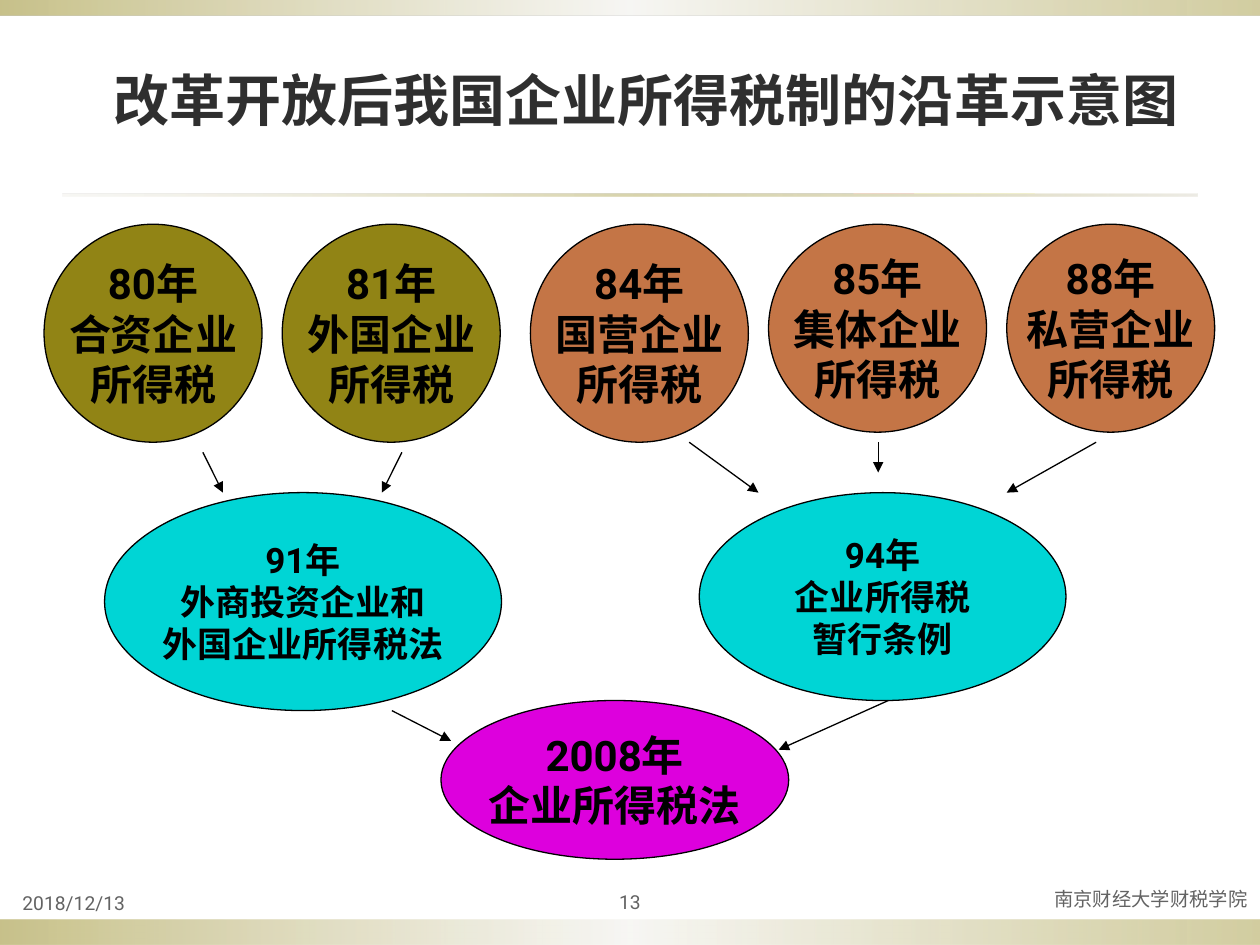
import dataclasses

import lxml.etree
import pptx
import pptx.dml.color
import pptx.enum.shapes
import pptx.enum.text
import pptx.oxml.ns
import pptx.util

Inches = pptx.util.Inches
Pt = pptx.util.Pt
Color = pptx.dml.color.RGBColor.from_string
qn = pptx.oxml.ns.qn
ALIGN = pptx.enum.text.PP_ALIGN
ANCHOR = pptx.enum.text.MSO_ANCHOR
SHAPE = pptx.enum.shapes.MSO_SHAPE


@dataclasses.dataclass
class Theme:
    olive: str = "918415"
    pale: str = "EEEDE7"
    sand: str = "DCD9CC"
    orange: str = "C47546"
    cyan: str = "00D5D5"
    magenta: str = "DD00DD"
    ink: str = "000000"
    title: str = "2F2F2F"
    footer: str = "636363"
    latin_font: str = "Roboto"
    chinese_font: str = "Noto Sans CJK SC"
    title_size: int = 32
    large_size: int = 24
    medium_size: int = 20
    footer_size: int = 11
    line_width: float = 0.75


theme = Theme()


def write_text(shape, text, *, size, color, font=theme.latin_font, bold=False,
               align=ALIGN.CENTER, anchor=ANCHOR.MIDDLE, wrap=True):
    """Fill a shape with one paragraph for each line of text."""
    frame = shape.text_frame
    frame.text = text
    frame.word_wrap = wrap
    frame.vertical_anchor = anchor
    frame.auto_size = pptx.enum.text.MSO_AUTO_SIZE.NONE
    for paragraph in frame.paragraphs:
        paragraph.alignment = align
        for run in paragraph.runs:
            run.font.name = font
            run.font.size = Pt(size)
            run.font.bold = bold
            run.font.color.rgb = Color(color)
            east_asian = lxml.etree.Element(qn("a:ea"), typeface=theme.chinese_font)
            run.font._element.find(qn("a:latin")).addnext(east_asian)


presentation = pptx.Presentation()
presentation.slide_width = Inches(10)
presentation.slide_height = Inches(7.5)
slide = presentation.slides.add_slide(presentation.slide_layouts[5])

# Gradient bars at top and bottom, and the rule under the title
edge_stops = [(0, theme.olive, 50), (50, theme.pale, 45), (100, theme.olive, 40)]
rule_stops = [(0, theme.sand, 20), (50, theme.olive, 35), (100, theme.sand, 50)]
bars = [
    (0, 7.3, 10, 0.2, edge_stops),
    (0, 0, 10, 0.12, edge_stops),
    (0.5, 1.54, 9, 0.02, rule_stops),
]
for left, top, width, height, stops in bars:
    bar = slide.shapes.add_shape(SHAPE.RECTANGLE, Inches(left), Inches(top),
                                 Inches(width), Inches(height))
    bar.shadow.inherit = False
    bar.line.fill.background()
    bar.fill.gradient()
    bar.fill.gradient_angle = 0
    stop_list = bar._element.spPr.find(".//" + qn("a:gsLst"))
    for old_stop in list(stop_list):
        stop_list.remove(old_stop)
    for position, color, opacity in stops:
        stop = lxml.etree.SubElement(stop_list, qn("a:gs"), pos=str(position * 1000))
        stop_color = lxml.etree.SubElement(stop, qn("a:srgbClr"), val=color)
        lxml.etree.SubElement(stop_color, qn("a:alpha"), val=str(opacity * 1000))

# Title
title = slide.shapes.title
title.left, title.top = Inches(0.67), Inches(0.25)
title.width, title.height = Inches(8.92), Inches(1.08)
write_text(title, "改革开放后我国企业所得税制的沿革示意图", size=theme.title_size,
           color=theme.title, font=theme.chinese_font, bold=True)

# Tax laws: early taxes, the two merged laws, the unified law
laws = [
    (0.35, 1.78, 1.73, 1.73, theme.olive, theme.large_size, "80年\n合资企业\n所得税"),
    (2.24, 1.78, 1.73, 1.73, theme.olive, theme.large_size, "81年\n外国企业\n所得税"),
    (4.21, 1.78, 1.73, 1.73, theme.orange, theme.large_size, "84年\n国营企业\n所得税"),
    (6.1, 1.78, 1.73, 1.65, theme.orange, theme.large_size, "85年\n集体企业\n所得税"),
    (7.99, 1.78, 1.65, 1.65, theme.orange, theme.large_size, "88年\n私营企业\n所得税"),
    (0.83, 3.91, 3.15, 1.73, theme.cyan, theme.medium_size,
     "91年\n外商投资企业和\n外国企业所得税法"),
    (5.55, 3.91, 2.91, 1.65, theme.cyan, theme.medium_size,
     "94年\n企业所得税\n暂行条例"),
    (3.5, 5.56, 2.76, 1.26, theme.magenta, theme.large_size, "2008年\n企业所得税法"),
]
for left, top, width, height, color, size, text in laws:
    law = slide.shapes.add_shape(SHAPE.OVAL, Inches(left), Inches(top),
                                 Inches(width), Inches(height))
    law.shadow.inherit = False
    law.fill.solid()
    law.fill.fore_color.rgb = Color(color)
    law.line.color.rgb = Color(theme.ink)
    law.line.width = Pt(theme.line_width)
    write_text(law, text, size=size, color=theme.ink, bold=True, wrap=False)

# Arrows from each law to its successor
arrows = [
    (1.61, 3.59, 1.77, 3.91),
    (3.19, 3.59, 3.03, 3.91),
    (5.47, 3.51, 6.02, 3.91),
    (6.97, 3.51, 6.97, 3.75),
    (8.7, 3.51, 7.99, 3.91),
    (3.11, 5.64, 3.58, 5.88),
    (7.05, 5.56, 6.18, 5.95),
]
for ends in arrows:
    arrow = slide.shapes.add_connector(pptx.enum.shapes.MSO_CONNECTOR.STRAIGHT,
                                       *[Inches(value) for value in ends])
    arrow.line.color.rgb = Color(theme.ink)
    arrow.line.width = Pt(theme.line_width)
    lxml.etree.SubElement(arrow.line._get_or_add_ln(), qn("a:tailEnd"), type="triangle")
    lxml.etree.SubElement(arrow._element.spPr, qn("a:effectLst"))

# Footer: date, page number, school
footers = [
    (0.08, 7, 3.5, "2018/12/13", ALIGN.LEFT, ANCHOR.BOTTOM),
    (4.5, 7, 1, "13", ALIGN.CENTER, ANCHOR.MIDDLE),
    (5.92, 6.98, 4.08, "南京财经大学财税学院", ALIGN.RIGHT, ANCHOR.MIDDLE),
]
for left, top, width, text, align, anchor in footers:
    footer = slide.shapes.add_textbox(Inches(left), Inches(top), Inches(width), Inches(0.31))
    write_text(footer, text, size=theme.footer_size, color=theme.footer,
               align=align, anchor=anchor)

presentation.save("out.pptx")
